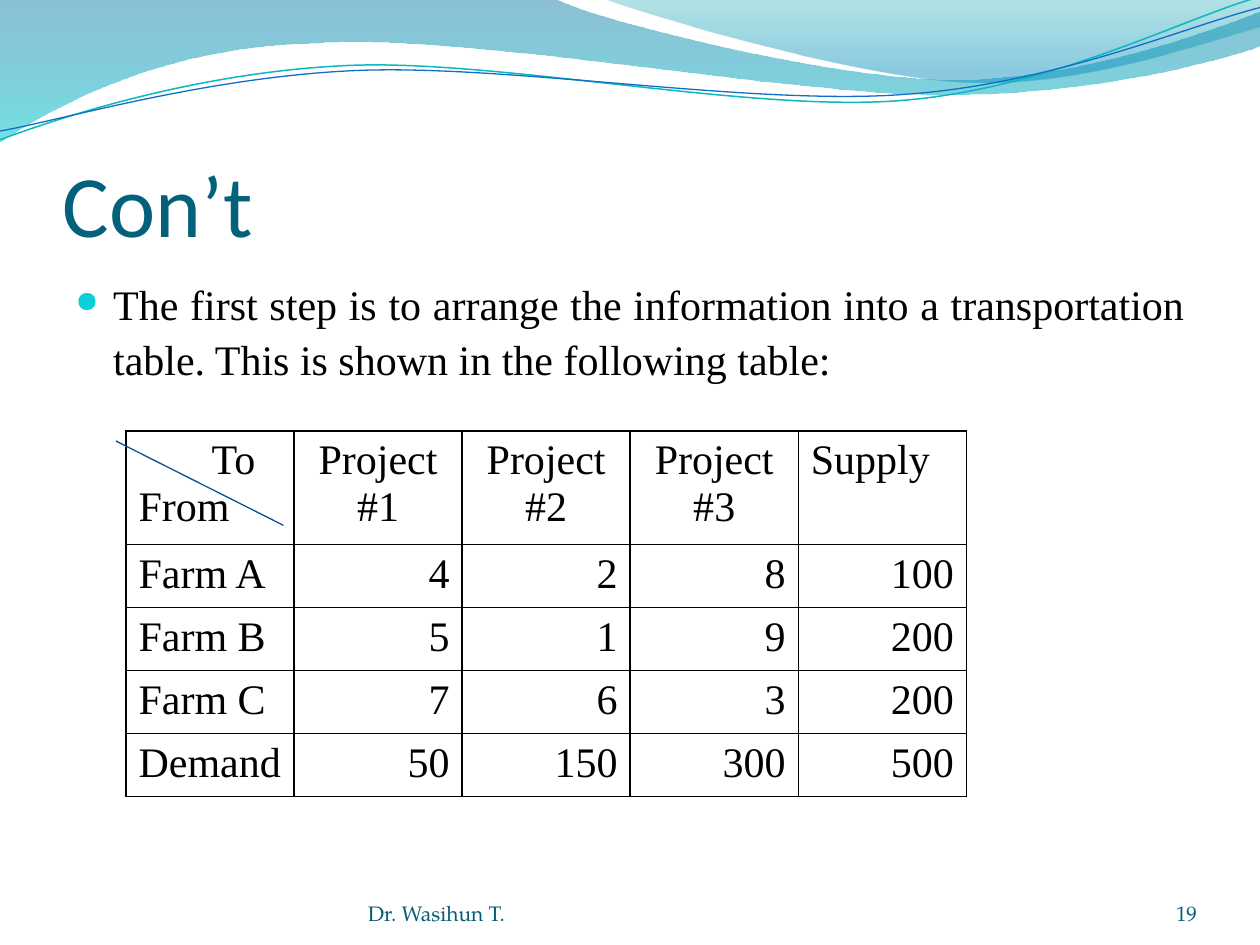
import pptx
import pptx.dml.color
import pptx.enum.shapes
import pptx.enum.text
import pptx.oxml
import pptx.oxml.ns
import pptx.util
from pptx.util import Inches

COLORS = {
    "title": "04617B",
    "footer": "045D75",
    "text": "000000",
    "bullet": "0BD0D9",
    "diagonal": "095295",
    "teal_line": "0AB8BF",
    "blue_line": "0F6FC6",
}
ALIGN = pptx.enum.text.PP_ALIGN
ANCHOR = pptx.enum.text.MSO_ANCHOR

TITLE_FONT = {"name": "Calibri", "size": pptx.util.Pt(50)}
BODY_FONT = {"name": "Times New Roman", "size": pptx.util.Pt(24)}
FOOTER_FONT = {"name": "TeX Gyre Pagella", "size": pptx.util.Pt(12)}

# Each wave is a list of segments: two numbers for a line, six for a Bezier curve.
# Gradient stops give colour, position and opacity, both in percent.
FILLED_WAVES = [
    ([(0, 0), (4.4, -0.01), (4.76, 0.17, 6.64, 0.63, 7.58, 0.63),
      (8.53, 0.63, 9.58, 0.26, 10, 0.09), (10.01, 0.36),
      (9.83, 0.44, 8.7, 0.76, 7.46, 0.75), (6.22, 0.75, 3.82, 0.28, 2.57, 0.34),
      (1.29, 0.36, 0.46, 0.83, -0.01, 1.13), (0, 0)],
     [("0074A1", 0, 45), ("00C6CF", 100, 55)]),
    ([(4.79, -0.01), (5.09, 0.11, 6.82, 0.62, 7.69, 0.65),
      (8.56, 0.69, 9.61, 0.32, 10, 0.21), (10, 0), (4.79, -0.01)],
     [("00A1A9", 0, 30), ("008BBF", 80, 45)]),
]
LINE_WAVES = [
    ([(0, 1.11), (0.48, 0.93, 1.58, 0.57, 2.77, 0.52),
      (3.95, 0.47, 5.93, 0.89, 7.13, 0.8), (8.33, 0.71, 9.38, 0.15, 9.98, -0.02)],
     "teal_line", 0.85),
    ([(0, 1.04), (0.47, 0.96, 1.64, 0.61, 2.83, 0.56),
      (4.03, 0.51, 5.97, 0.84, 7.17, 0.75), (8.36, 0.67, 9.41, 0.21, 10, 0.06)],
     "blue_line", 0.75),
]
TABLE_ROWS = [
    ["To\nFrom", "Project #1", "Project #2", "Project #3", "Supply"],
    ["Farm A", "4", "2", "8", "100"],
    ["Farm B", "5", "1", "9", "200"],
    ["Farm C", "7", "6", "3", "200"],
    ["Demand", "50", "150", "300", "500"],
]


def rgb(hex_string):
    return pptx.dml.color.RGBColor.from_string(hex_string)


def add_xml(parent, tag, content="", **attributes):
    """Append a DrawingML element to parent and return it."""
    listed = "".join(f' {key}="{value}"' for key, value in attributes.items())
    namespace = pptx.oxml.ns.nsdecls("a")
    element = pptx.oxml.parse_xml(f"<a:{tag} {namespace}{listed}>{content}</a:{tag}>")
    parent.append(element)
    return element


def curve_segments(shape, segments):
    """Join each three lines that stand for a Bezier curve into that curve."""
    lines = iter(shape.element.spPr.findall(".//" + pptx.oxml.ns.qn("a:lnTo")))
    for segment in segments[1:]:
        first = next(lines)
        if len(segment) == 2:
            continue
        curve = add_xml(first.getparent(), "cubicBezTo")
        first.addprevious(curve)
        for line in (first, next(lines), next(lines)):
            curve.append(line[0])
            line.getparent().remove(line)


def add_wave(slide, segments, closed):
    points = [(Inches(segment[index]), Inches(segment[index + 1]))
              for segment in segments for index in range(0, len(segment), 2)]
    builder = slide.shapes.build_freeform(*points[0])
    builder.add_line_segments(points[1:], close=closed)
    shape = builder.convert_to_shape()
    curve_segments(shape, segments)
    shape.shadow.inherit = False
    return shape


def add_filled_wave(slide, segments, stops):
    shape = add_wave(slide, segments, True)
    shape.line.fill.background()
    shape.fill.gradient()
    shape.fill.gradient_angle = 270
    for stop, (color, position, opacity) in zip(shape.fill.gradient_stops, stops):
        stop.color.rgb = rgb(color)
        stop.position = position / 100
    color_elements = shape.element.spPr.findall(".//" + pptx.oxml.ns.qn("a:srgbClr"))
    for element, (_, _, opacity) in zip(color_elements, stops):
        add_xml(element, "alpha", val=opacity * 1000)


def add_line_wave(slide, segments, color, width):
    shape = add_wave(slide, segments, False)
    shape.fill.background()
    shape.line.color.rgb = rgb(COLORS[color])
    shape.line.width = pptx.util.Pt(width)


def write_paragraph(paragraph, text, font, color, alignment):
    paragraph.alignment = alignment
    run = paragraph.add_run()
    run.text = text
    for attribute, value in font.items():
        setattr(run.font, attribute, value)
    run.font.color.rgb = rgb(COLORS[color])


def add_text(slide, box, text, font, color, alignment=ALIGN.LEFT, **frame_format):
    text_frame = slide.shapes.add_textbox(*map(Inches, box)).text_frame
    text_frame.word_wrap = True
    for attribute, value in frame_format.items():
        setattr(text_frame, attribute, value)
    paragraph = text_frame.paragraphs[0]
    write_paragraph(paragraph, text, font, color, alignment)
    return paragraph


def add_bullet(paragraph):
    properties = paragraph._p.get_or_add_pPr()
    properties.set("marL", str(Inches(0.3)))
    properties.set("indent", str(Inches(-0.3)))
    add_xml(properties, "buClr", f'<a:srgbClr val="{COLORS["bullet"]}"/>')
    add_xml(properties, "buSzPct", val=70000)
    add_xml(properties, "buChar", char="●")


def format_cell(cell):
    line = f'<a:solidFill><a:srgbClr val="{COLORS["text"]}"/></a:solidFill>'
    for side in ("lnL", "lnR", "lnT", "lnB"):
        add_xml(cell._tc.get_or_add_tcPr(), side, line, w=pptx.util.Pt(1))
    cell.fill.background()


def cell_alignment(row, column):
    if column == 0:
        return ALIGN.LEFT
    if row > 0:
        return ALIGN.RIGHT
    return ALIGN.LEFT if TABLE_ROWS[row][column] == "Supply" else ALIGN.CENTER


def add_cost_table(slide):
    row_count, column_count = len(TABLE_ROWS), len(TABLE_ROWS[0])
    frame = slide.shapes.add_table(row_count, column_count, Inches(1), Inches(3.42),
                                   Inches(6.67), Inches(2.9))
    table = frame.table
    table.first_row = False
    table.horz_banding = False
    for index, row in enumerate(table.rows):
        row.height = Inches(0.41 if index else 0.5)
    frame.height = Inches(2.9)
    for row, texts in enumerate(TABLE_ROWS):
        for column, text in enumerate(texts):
            cell = table.cell(row, column)
            format_cell(cell)
            for index, line in enumerate(text.split("\n")):
                text_frame = cell.text_frame
                paragraph = text_frame.add_paragraph() if index else text_frame.paragraphs[0]
                write_paragraph(paragraph, line, BODY_FONT, "text", cell_alignment(row, column))
    corner = table.cell(0, 0).text_frame.paragraphs[0]
    corner._p.get_or_add_pPr().set("marL", str(Inches(0.58)))


def add_diagonal(slide):
    connector = slide.shapes.add_connector(
        pptx.enum.shapes.MSO_CONNECTOR.STRAIGHT,
        Inches(0.92), Inches(3.5), Inches(2.25), Inches(4.17))
    connector.line.color.rgb = rgb(COLORS["diagonal"])
    connector.line.width = pptx.util.Pt(0.75)
    add_xml(connector._element.spPr, "effectLst")


def main():
    presentation = pptx.Presentation()
    presentation.slide_width = Inches(10)
    presentation.slide_height = Inches(7.5)
    slide = presentation.slides.add_slide(presentation.slide_layouts[6])

    for segments, stops in FILLED_WAVES:
        add_filled_wave(slide, segments, stops)
    for segments, color, width in LINE_WAVES:
        add_line_wave(slide, segments, color, width)

    add_text(slide, (0.5, 0.77, 9, 1.25), "Con’t", TITLE_FONT, "title",
             vertical_anchor=ANCHOR.BOTTOM, margin_left=0, margin_right=0, margin_bottom=0)
    body = add_text(slide, (0.5, 2.12, 9, 4.8),
                    "The first step is to arrange the information into a transportation "
                    "table. This is shown in the following table:",
                    BODY_FONT, "text", ALIGN.JUSTIFY)
    add_bullet(body)
    body.line_spacing = 1.1

    add_cost_table(slide)
    add_diagonal(slide)

    footer_format = {"vertical_anchor": ANCHOR.BOTTOM, "margin_left": 0, "margin_top": 0,
                     "margin_right": 0, "margin_bottom": 0}
    add_text(slide, (8.67, 6.95, 0.83, 0.4), "19", FOOTER_FONT, "footer",
             ALIGN.RIGHT, **footer_format)
    add_text(slide, (2.92, 6.95, 3.67, 0.4), "Dr. Wasihun T.", FOOTER_FONT, "footer",
             **footer_format)
    presentation.save("out.pptx")


if __name__ == "__main__":
    main()
